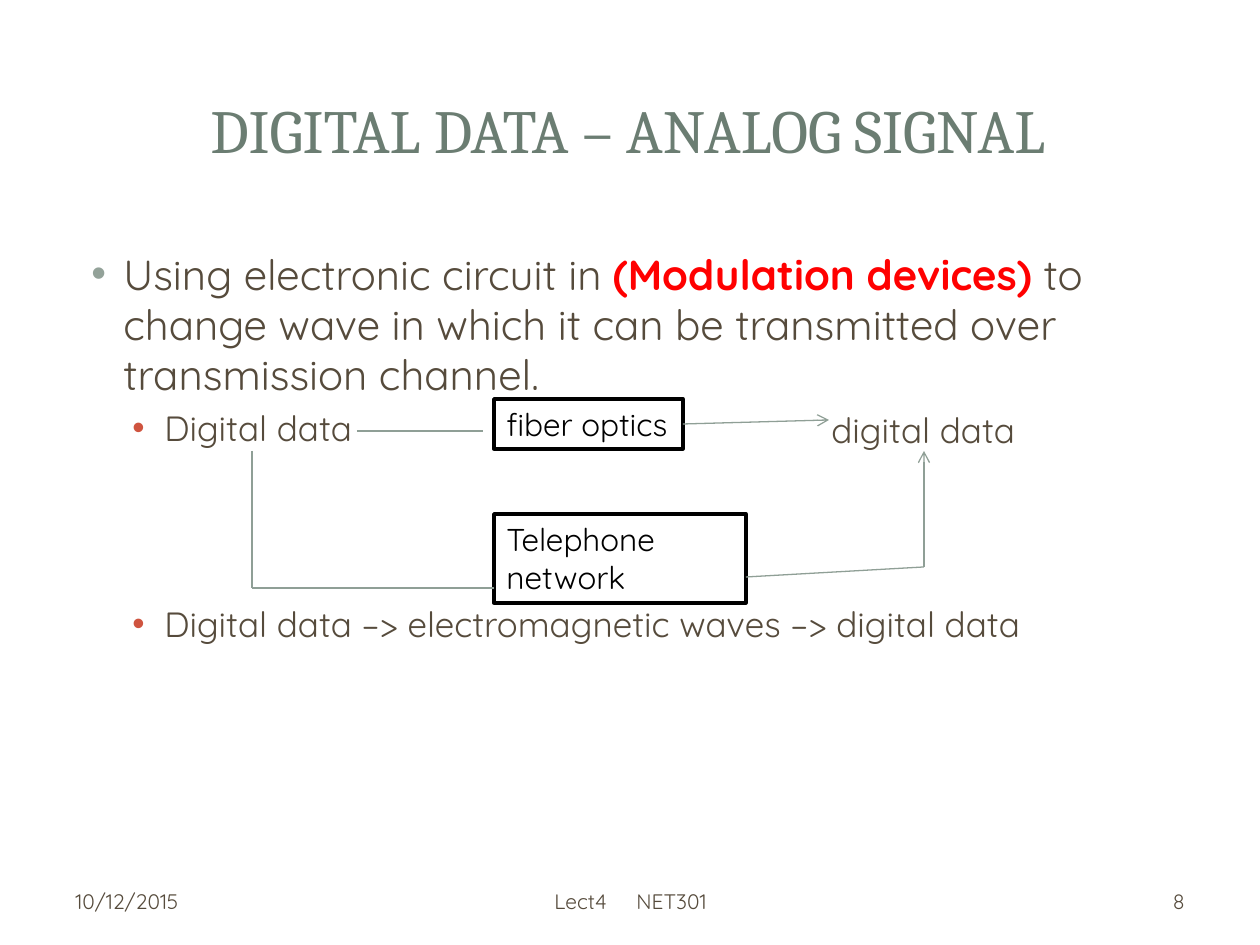
from dataclasses import dataclass

from lxml.etree import SubElement
from pptx import Presentation
from pptx.dml.color import RGBColor
from pptx.enum.shapes import MSO_CONNECTOR, MSO_SHAPE
from pptx.enum.text import MSO_ANCHOR, PP_ALIGN
from pptx.oxml.ns import qn
from pptx.util import Emu, Pt

PX = 914400 // 126  # EMU in one px


@dataclass(frozen=True)
class Theme:
    heading_font: str = "Cambria"
    body_font: str = "Quicksand"
    heading: str = "6B7D72"
    text: str = "564B3C"
    accent: str = "FF0000"
    black: str = "000000"
    white: str = "FFFFFF"
    wire: str = "8F9F96"
    bullet: str = "93A299"
    sub_bullet: str = "CF543F"
    title_size: int = 35
    lead_size: int = 24
    item_size: int = 20
    box_size: int = 18
    footer_size: int = 12


class SlideBuilder:
    def __init__(self, page, theme):
        self.page = page
        self.theme = theme

    def span(self, para, text, size, color=None, font=None, bold=False):
        span = para.add_run()
        span.text = text
        formats = {"size": Pt(size), "name": font or self.theme.body_font, "bold": bold}
        for name, value in formats.items():
            setattr(span.font, name, value)
        span.font.color.rgb = RGBColor.from_string(color or self.theme.text)
        return span

    def frame(self, box, anchor):
        formats = {"word_wrap": True, "vertical_anchor": anchor}
        for name, value in formats.items():
            setattr(box.text_frame, name, value)
        return box.text_frame

    def text_box(self, left, top, width, height, anchor=MSO_ANCHOR.MIDDLE):
        box = self.page.shapes.add_textbox(*(Emu(v * PX) for v in (left, top, width, height)))
        return self.frame(box, anchor)

    def label(self, bounds, text, align, size, color=None, font=None):
        para = self.text_box(*bounds).paragraphs[0]
        para.alignment = align
        self.span(para, text, size, color, font)
        return para

    def bullet(self, para, color, left, hang, before):
        para.space_before = Pt(before)
        properties = para._p.get_or_add_pPr()
        properties.set("marL", str(left * PX))
        properties.set("indent", str(-hang * PX))
        bullet_color = SubElement(properties, qn("a:buClr"))
        SubElement(bullet_color, qn("a:srgbClr"), val=color)
        SubElement(properties, qn("a:buFont"), typeface="Arial")
        SubElement(properties, qn("a:buChar"), char="•")

    def node(self, left, top, width, height, text):
        box = self.page.shapes.add_shape(
            MSO_SHAPE.RECTANGLE, *(Emu(v * PX) for v in (left, top, width, height)))
        box.shadow.inherit = False
        box.fill.solid()
        box.fill.fore_color.rgb = RGBColor.from_string(self.theme.white)
        box.line.color.rgb = RGBColor.from_string(self.theme.black)
        box.line.width = Pt(2)
        para = self.frame(box, MSO_ANCHOR.TOP).paragraphs[0]
        para.alignment = PP_ALIGN.LEFT
        self.span(para, text, self.theme.box_size, self.theme.black)
        return box

    def wire(self, start, end, arrow=False):
        wire = self.page.shapes.add_connector(
            MSO_CONNECTOR.STRAIGHT, *(Emu(v * PX) for v in (*start, *end)))
        wire.line.color.rgb = RGBColor.from_string(self.theme.wire)
        wire.line.width = Pt(0.75)
        if arrow:
            SubElement(wire.line._get_or_add_ln(), qn("a:tailEnd"), type="arrow")
        SubElement(wire._element.spPr, qn("a:effectLst"))
        return wire


def main():
    deck = Presentation()
    deck.slide_width, deck.slide_height = Emu(1260 * PX), Emu(945 * PX)
    theme = Theme()
    slide = SlideBuilder(deck.slides.add_slide(deck.slide_layouts[6]), theme)

    # Title
    slide.label((59, 57, 1138, 144), "DIGITAL DATA – ANALOG SIGNAL", PP_ALIGN.CENTER,
                theme.title_size, theme.heading, theme.heading_font)

    # Bulleted text; the last item leaves room for the diagram
    body = slide.text_box(63, 242, 1134, 602, MSO_ANCHOR.TOP)
    lead = body.paragraphs[0]
    slide.bullet(lead, theme.bullet, 48, 32, before=5)
    slide.span(lead, "Using electronic circuit in ", theme.lead_size)
    slide.span(lead, "(Modulation devices) ", theme.lead_size, theme.accent, bold=True)
    slide.span(lead, "to change wave in which it can be transmitted over transmission channel.",
               theme.lead_size)
    items = [("Digital data", 4),
             ("Digital data –> electromagnetic waves –> digital data", 88)]
    for text, before in items:
        para = body.add_paragraph()
        slide.bullet(para, theme.sub_bullet, 89, 32, before)
        slide.span(para, text, theme.item_size)

    # Receiving end of both routes
    slide.label((819, 405, 220, 50), "digital data", PP_ALIGN.LEFT, theme.item_size)

    # Upper route: fiber optics
    fiber = slide.node(494, 399, 189, 50, "fiber optics")
    slide.wire((683, 424), (829, 420), arrow=True).begin_connect(fiber, 3)
    slide.wire((357, 431), (483, 431))

    # Lower route: telephone network
    slide.node(494, 514, 252, 89, "Telephone network")
    slide.wire((252, 451), (252, 588))
    slide.wire((252, 588), (494, 588))
    slide.wire((746, 577), (924, 567))
    slide.wire((924, 567), (924, 451), arrow=True)

    # Footer; one widened space parts the lecture from the course
    slide.label((63, 876, 294, 50), "10/12/2015", PP_ALIGN.LEFT, theme.footer_size)
    course = slide.label((431, 876, 399, 50), "Lect4", PP_ALIGN.CENTER, theme.footer_size)
    gap = slide.span(course, " ", theme.footer_size)
    gap.font._element.set("spc", "1360")
    slide.span(course, "NET301", theme.footer_size)
    slide.label((903, 876, 294, 50), "8", PP_ALIGN.RIGHT, theme.footer_size)

    deck.save("out.pptx")


if __name__ == "__main__":
    main()
